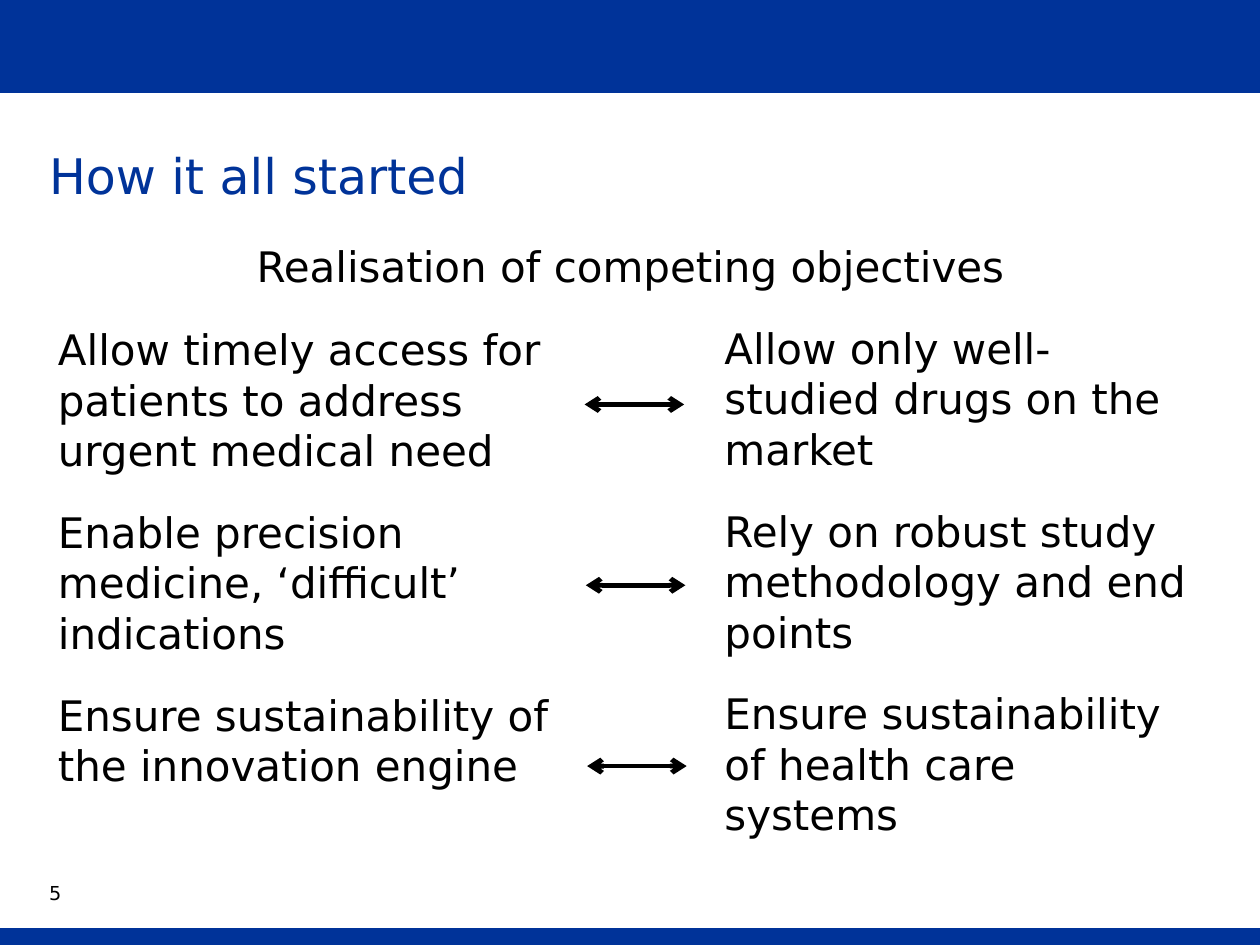
from lxml.etree import SubElement
from pptx import Presentation
from pptx.dml.color import RGBColor
from pptx.enum.shapes import MSO_CONNECTOR, MSO_SHAPE
from pptx.enum.text import MSO_ANCHOR, MSO_AUTO_SIZE, PP_ALIGN
from pptx.oxml.ns import qn
from pptx.util import Inches, Pt

BLUE = RGBColor(0x00, 0x33, 0x99)
BLACK = RGBColor(0x00, 0x00, 0x00)
WHITE = RGBColor(0xFF, 0xFF, 0xFF)
FONT = "DejaVu Sans"

NEEDS = [
    "Allow timely access for patients to address urgent medical need",
    "Enable precision medicine, ‘difficult’ indications",
    "Ensure sustainability of the innovation engine",
]
LIMITS = [
    "Allow only well-studied drugs on the market",
    "Rely on robust study methodology and end points",
    "Ensure sustainability of health care systems",
]


def place(shape, left, top, width, height):
    shape.left, shape.top = Inches(left), Inches(top)
    shape.width, shape.height = Inches(width), Inches(height)


def fill_text(shape, lines, size, color=BLACK, after=0, pitch=None):
    frame = shape.text_frame
    frame.text = "\n".join(lines)
    frame.word_wrap = True
    frame.auto_size = MSO_AUTO_SIZE.NONE
    frame.vertical_anchor = MSO_ANCHOR.TOP
    frame.margin_left = frame.margin_right = 0
    frame.margin_top = frame.margin_bottom = 0
    for para in frame.paragraphs:
        para.alignment = PP_ALIGN.LEFT
        para.space_after = Pt(after)
        if pitch:
            para.line_spacing = pitch
        for run in para.runs:
            run.font.name = FONT
            run.font.size = Pt(size)
            run.font.color.rgb = color
    return frame


def add_text(slide, box, lines, size, **style):
    shape = slide.shapes.add_textbox(*map(Inches, box))
    return fill_text(shape, lines, size, **style)


def add_bar(slide, top, height):
    bar = slide.shapes.add_shape(
        MSO_SHAPE.RECTANGLE, 0, Inches(top), Inches(10), Inches(height))
    bar.shadow.inherit = False
    bar.fill.solid()
    bar.fill.fore_color.rgb = BLUE
    bar.line.fill.background()


def add_line(slide, left, right, top, color, width, heads=False):
    line = slide.shapes.add_connector(
        MSO_CONNECTOR.STRAIGHT, Inches(left), Inches(top), Inches(right), Inches(top))
    line.line.color.rgb = color
    line.line.width = Pt(width)
    if heads:
        for end in ("a:headEnd", "a:tailEnd"):
            SubElement(line.line._get_or_add_ln(), qn(end), type="arrow")
    SubElement(line._element.spPr, qn("a:effectLst"))


def main():
    deck = Presentation()
    deck.slide_width, deck.slide_height = Inches(10), Inches(7.5)
    slide = deck.slides.add_slide(deck.slide_layouts[5])

    add_bar(slide, 7.36, 0.14)
    add_bar(slide, 0, 0.74)
    for top in (0.74, 7.36):
        add_line(slide, 0, 10, top, WHITE, 0.25)

    title = slide.shapes.title
    place(title, 0.39, 1.12, 9.25, 1.04)
    fill_text(title, ["How it all started"], 28, BLUE, pitch=Pt(36))

    add_text(slide, (0.46, 2.57, 3.94, 4.33), NEEDS, 24, after=18)
    add_text(slide, (5.75, 2.56, 3.74, 4.33), LIMITS, 24, after=18)
    add_text(slide, (0.39, 7.01, 0.34, 0.26), ["5"], 11, pitch=Pt(12))

    theme = add_text(slide, (1.88, 1.83, 6.25, 0.49),
                     ["Realisation of competing objectives"], 24, pitch=1.2)
    theme.word_wrap = False
    theme.paragraphs[0].alignment = PP_ALIGN.CENTER

    for row in range(len(NEEDS)):
        left = 4.64 + 0.01 * row
        add_line(slide, left, left + 0.79, 3.21 + 1.435 * row, BLACK, 2.75, heads=True)

    deck.save("out.pptx")


if __name__ == "__main__":
    main()
